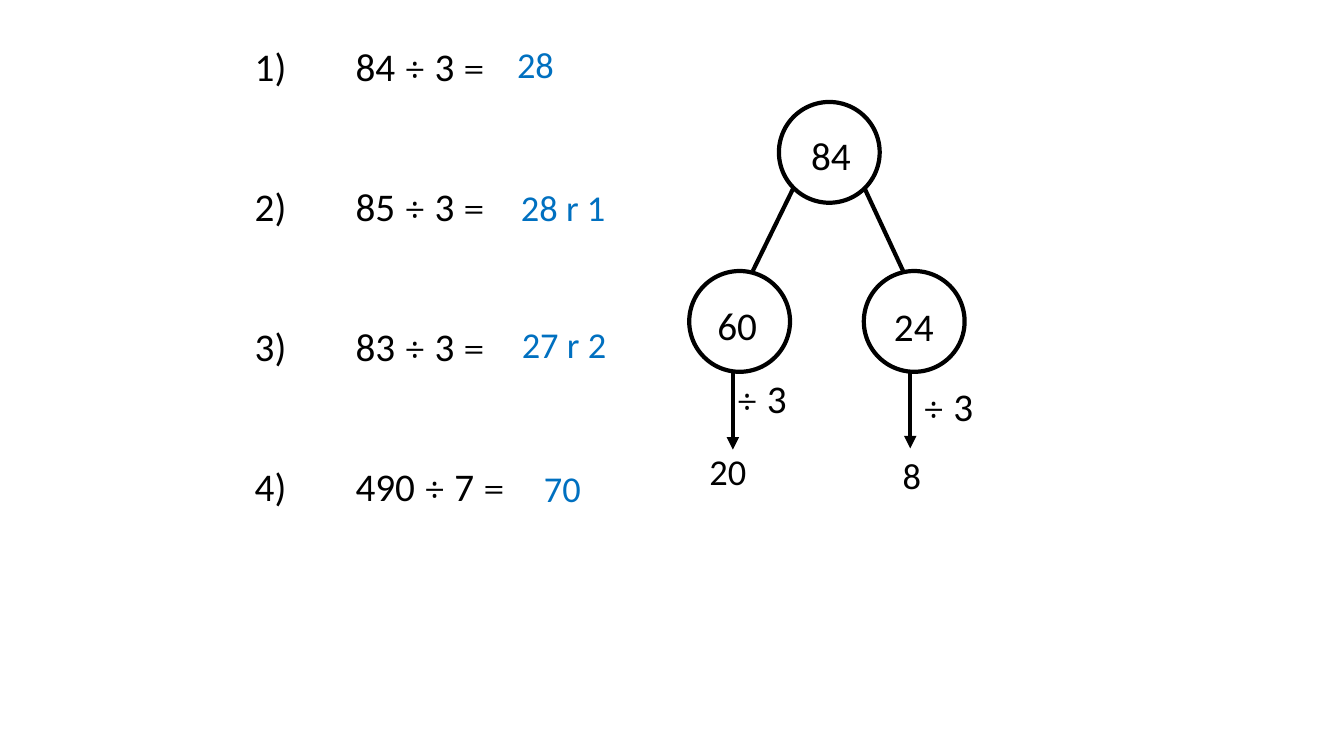
from itertools import groupby

from lxml import etree
from pptx import Presentation
from pptx import util as u
from pptx.dml.color import RGBColor
from pptx.enum import shapes, text
from pptx.oxml.ns import qn

BLACK, WHITE, BLUE = "000000", "FFFFFF", "0070C0"


def colour(hex_code):
    """Turn a hex string into a colour."""
    return RGBColor.from_string(hex_code)


class DivisionSlide:
    """Draw the elements of a division exercise in one style."""

    body_font, operator_font = "Calibri", "Cambria"
    stroke = u.Pt(3)
    circle_size = u.Cm(2.54)

    def __init__(self, slide):
        """Keep the slide to draw on."""
        self.shapes = slide.shapes

    def add_words(self, paragraph, words, size, ink):
        """Fill a paragraph, setting operators in their own font."""
        for is_operator, letters in groupby(words, lambda letter: letter in "÷="):
            run = paragraph.add_run()
            run.text = "".join(letters)
            font = self.operator_font if is_operator else self.body_font
            for name, value in {"name": font, "size": u.Pt(size)}.items():
                setattr(run.font, name, value)
            run.font.color.rgb = colour(ink)

    def label(self, lines, left, top, width, height, size=28, ink=BLACK, gap=0, tab=None):
        """Place text, one paragraph per line."""
        frame = self.shapes.add_textbox(*map(u.Cm, (left, top, width, height))).text_frame
        layout = {"word_wrap": True, "auto_size": text.MSO_AUTO_SIZE.NONE,
                  "vertical_anchor": text.MSO_ANCHOR.TOP}
        for name, value in layout.items():
            setattr(frame, name, value)
        for index, words in enumerate(lines):
            paragraph = frame.add_paragraph() if index else frame.paragraphs[0]
            paragraph.space_before = u.Pt(gap if index else 0)
            if tab:
                stops = etree.SubElement(paragraph._p.get_or_add_pPr(), qn("a:tabLst"))
                etree.SubElement(stops, qn("a:tab"), pos=str(u.Cm(tab)), algn="l")
            self.add_words(paragraph, words, size, ink)

    def circle(self, left, top):
        """Draw an outlined circle."""
        ring = self.shapes.add_shape(shapes.MSO_SHAPE.OVAL, u.Cm(left), u.Cm(top),
                                     self.circle_size, self.circle_size)
        ring.shadow.inherit = False
        ring.fill.solid()
        ring.fill.fore_color.rgb = colour(WHITE)
        ring.line.color.rgb = colour(BLACK)
        ring.line.width = self.stroke

    def link(self, start, end, arrow=False):
        """Draw a straight line, with an arrowhead if asked."""
        branch = self.shapes.add_connector(shapes.MSO_CONNECTOR.STRAIGHT,
                                           *map(u.Cm, (*start, *end)))
        branch.line.color.rgb = colour(BLACK)
        branch.line.width = self.stroke
        if arrow:
            etree.SubElement(branch.line._get_or_add_ln(), qn("a:tailEnd"), type="triangle")
        etree.SubElement(branch._element.spPr, qn("a:effectLst"))


def main():
    """Build the slide and save it."""
    deck = Presentation()
    deck.slide_width, deck.slide_height = u.Cm(33.87), u.Cm(19.05)
    exercise = DivisionSlide(deck.slides.add_slide(deck.slide_layouts[6]))

    questions = ["84 ÷ 3 =", "85 ÷ 3 =", "83 ÷ 3 =", "490 ÷ 7 ="]
    numbered = [f"{number})\t{division}" for number, division in enumerate(questions, 1)]
    exercise.label(numbered, 6.17, 0.94, 7.98, 13.41, gap=66.5, tab=2.54)

    answers = [("28", 12.78, 0.94), ("28 r 1", 12.88, 4.55),
               ("27 r 2", 12.9, 8), ("70", 13.46, 11.63)]
    for answer, left, top in answers:
        exercise.label([answer], left, top, 2.74, 1.37, size=26, ink=BLUE)

    whole_and_parts = [("84", (19.63, 2.57), (20.19, 3.18)),
                       ("60", (17.37, 6.83), (17.83, 7.47)),
                       ("24", (21.77, 6.83), (22.28, 7.49))]
    for number, ring_at, number_at in whole_and_parts:
        exercise.circle(*ring_at)
        exercise.label([number], *number_at, 2.59, 1.45)

    for start, end in [((19.99, 4.75), (18.97, 6.83)), ((21.79, 4.75), (22.76, 6.83))]:
        exercise.link(start, end)

    divisions = [("20", (18.47, 9.4), (18.31, 9.32), (17.63, 11.2)),
                 ("8", (22.94, 9.37), (23.01, 9.5), (22.5, 11.3))]
    for quotient, (x, y), divisor_at, quotient_at in divisions:
        exercise.link((x, y), (x, y + 1.93), arrow=True)
        exercise.label(["÷ 3"], *divisor_at, 1.98, 1.45)
        exercise.label([quotient], *quotient_at, 2.74, 1.37, size=26)

    deck.save("out.pptx")


if __name__ == "__main__":
    main()
